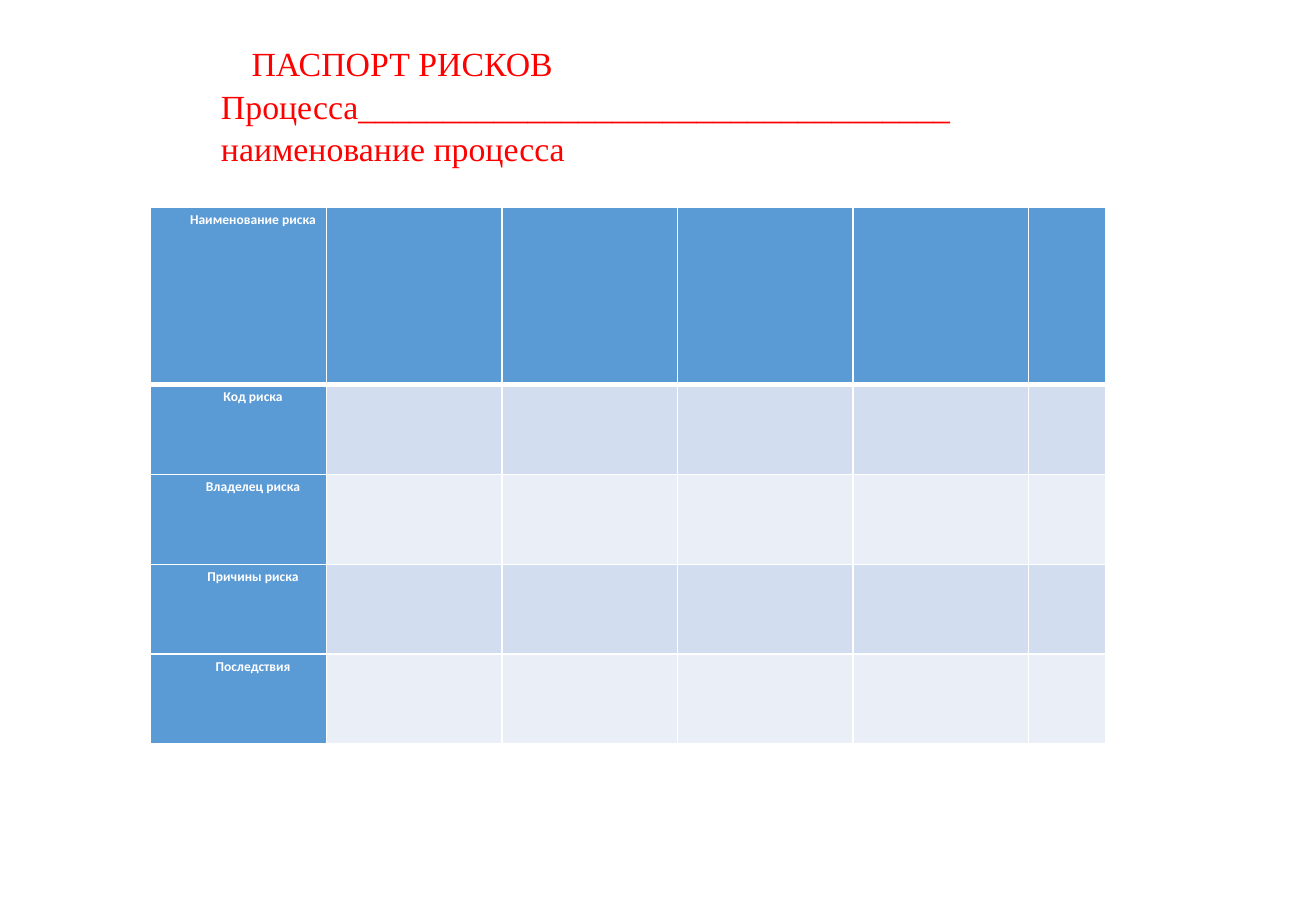
import pptx
import pptx.dml.color
import pptx.enum.text
import pptx.oxml.ns
import pptx.util
from lxml import etree

Cm = pptx.util.Cm
Pt = pptx.util.Pt
ALIGN = pptx.enum.text.PP_ALIGN
ANCHOR = pptx.enum.text.MSO_ANCHOR

TITLE_LINES = [
    ("ПАСПОРТ РИСКОВ", 1.25),
    ("Процесса" + "_" * 35, 0.61),
    ("наименование процесса", 0.61),
]
ROW_LABELS = ["Наименование риска", "Код риска", "Владелец риска",
              "Причины риска", "Последствия"]
COLUMN_WIDTHS = [3.67] * 5 + [1.62]
ROW_HEIGHTS = [3.71] + [1.88] * 4


def color(value):
    return pptx.dml.color.RGBColor.from_string(value)


class RiskPage:
    """Holds the style and the current slide."""

    title_color = "FF0000"
    head_fill = "5B9BD5"
    band_fills = ["EAEFF7", "D2DEEF"]
    white = "FFFFFF"

    def __init__(self, deck):
        self.page = deck.slides.add_slide(deck.slide_layouts[6])

    def style(self, para, font_name, size, font_color, indent, bold=False):
        para._p.get_or_add_pPr().set("indent", str(Cm(indent)))
        for span in para.runs:
            span.font.name = font_name
            span.font.size = Pt(size)
            span.font.bold = bold
            span.font.color.rgb = color(font_color)

    def title(self, left, top, width, height, lines):
        box = self.page.shapes.add_textbox(Cm(left), Cm(top), Cm(width), Cm(height))
        frame = box.text_frame
        frame.word_wrap = True
        frame.vertical_anchor = ANCHOR.MIDDLE
        frame.margin_bottom = Cm(0.74)
        frame.text = "\n".join(text for text, _ in lines)
        for para, (_, indent) in zip(frame.paragraphs, lines):
            para.line_spacing = 1.05
            self.style(para, "Times New Roman", 20, self.title_color, indent)

    def borders(self, cell, bottom):
        """Draws white cell edges, 1 pt except for the bottom one."""
        properties = cell._tc.get_or_add_tcPr()
        for edge, points in (("L", 1), ("R", 1), ("T", 1), ("B", bottom)):
            line = etree.SubElement(properties, pptx.oxml.ns.qn("a:ln" + edge),
                                    w=str(Pt(points)))
            fill = etree.SubElement(line, pptx.oxml.ns.qn("a:solidFill"))
            etree.SubElement(fill, pptx.oxml.ns.qn("a:srgbClr"), val=self.white)

    def label(self, cell, text):
        cell.margin_left = cell.margin_right = Cm(0.18)
        cell.margin_top = cell.margin_bottom = 0
        cell.text_frame.text = text
        para = cell.text_frame.paragraphs[0]
        para.alignment = ALIGN.CENTER
        para.line_spacing = 1.25
        self.style(para, "Calibri", 8, self.white, 0.61, bold=True)

    def table(self, left, top, widths, heights, labels):
        grid = self.page.shapes.add_table(
            len(heights), len(widths), Cm(left), Cm(top),
            Cm(sum(widths)), Cm(sum(heights))).table
        for column, width in zip(grid.columns, widths):
            column.width = Cm(width)
        for index, (row, height) in enumerate(zip(grid.rows, heights)):
            row.height = Cm(height)
            for position, cell in enumerate(row.cells):
                self.borders(cell, bottom=3 if index == 0 else 1)
                is_head = index == 0 or position == 0
                cell.fill.solid()
                cell.fill.fore_color.rgb = color(
                    self.head_fill if is_head else self.band_fills[index % 2])
            self.label(row.cells[0], labels[index])


def main():
    deck = pptx.Presentation()
    deck.slide_width = Cm(27.51)
    deck.slide_height = Cm(19.05)
    risks = RiskPage(deck)
    risks.table(3.15, 4.33, COLUMN_WIDTHS, ROW_HEIGHTS, ROW_LABELS)
    risks.title(3.76, 0.71, 22.66, 3.58, TITLE_LINES)
    deck.save("out.pptx")


if __name__ == "__main__":
    main()
